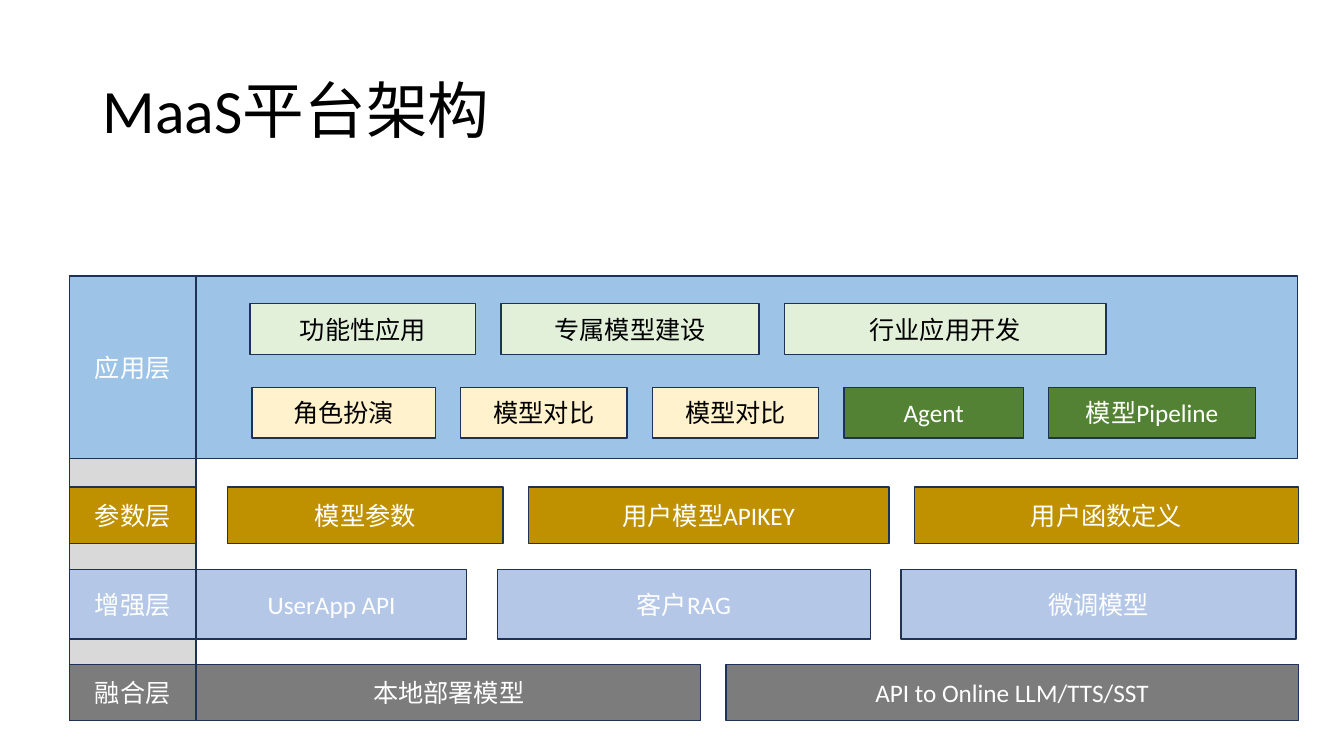
from pptx import Presentation
from pptx.dml.color import RGBColor
from pptx.enum.shapes import MSO_SHAPE
from pptx.enum.text import MSO_ANCHOR, PP_ALIGN
from pptx.util import Inches, Pt

RECT = MSO_SHAPE.RECTANGLE
MIDDLE = MSO_ANCHOR.MIDDLE
LEFT, CENTER = PP_ALIGN.LEFT, PP_ALIGN.CENTER

BLACK = RGBColor(0x00, 0x00, 0x00)
WHITE = RGBColor(0xFF, 0xFF, 0xFF)
NAVY = RGBColor(0x1E, 0x32, 0x56)
SKY = RGBColor(0x9D, 0xC3, 0xE6)
SILVER = RGBColor(0xD9, 0xD9, 0xD9)
MINT = RGBColor(0xE2, 0xF0, 0xD9)
CREAM = RGBColor(0xFF, 0xF2, 0xCC)
GREEN = RGBColor(0x54, 0x82, 0x35)
GOLD = RGBColor(0xBF, 0x90, 0x00)
PERIWINKLE = RGBColor(0xB4, 0xC7, 0xE7)
GREY = RGBColor(0x7C, 0x7C, 0x7C)

# Lengths are percentages of the slide's width and height.
LABEL_X, LABEL_W = 5.18, 9.4
BODY_X, BODY_W = 14.63, 81.9
APP_Y, APP_H = 36.53, 24.13
COLUMN_H = 58.8
GAP = 1.88

# Rows inside the application layer: left, top, height, boxes
APP_ROWS = [
    (18.6, 40.13, 6.8, [("功能性应用", 16.8, MINT, BLACK),
                        ("专属模型建设", 19.2, MINT, BLACK),
                        ("行业应用开发", 23.93, MINT, BLACK)]),
    (18.75, 51.25, 6.7, [("角色扮演", 13.65, CREAM, BLACK),
                         ("模型对比", 12.38, CREAM, BLACK),
                         ("模型对比", 12.38, CREAM, BLACK),
                         ("Agent", 13.35, GREEN, WHITE),
                         ("模型Pipeline", 15.38, GREEN, WHITE)]),
]

# Lower layers: label, colour, left, top, height, gap, boxes
LAYERS = [
    ("参数层", GOLD, 16.95, 64.4, 7.47, GAP,
     [("模型参数", 20.48), ("用户模型APIKEY", 26.85), ("用户函数定义", 28.58)]),
    ("增强层", PERIWINKLE, BODY_X, 75.33, 9.2, 2.28,
     [("UserApp API", 20.1), ("客户RAG", 27.75), ("微调模型", 29.4)]),
    ("融合层", GREY, BODY_X, 87.87, 7.47, GAP,
     [("本地部署模型", 37.5), ("API to Online LLM/TTS/SST", 42.6)]),
]


class Deck:
    font = "Calibri"
    title_size = Pt(44)
    box_size = Pt(18)

    def __init__(self):
        self.prs = Presentation()
        self.prs.slide_width = Inches(13.33)
        self.prs.slide_height = Inches(7.5)
        self.s = self.prs.slides.add_slide(self.prs.slide_layouts[5])

    def place(self, x, y, w, h):
        """Turn percentages of the slide into lengths."""
        sw, sh = self.prs.slide_width, self.prs.slide_height
        return [int(share * side / 100)
                for share, side in ((x, sw), (y, sh), (w, sw), (h, sh))]

    def add_text(self, sp, text, size, color, align):
        tf = sp.text_frame
        tf.word_wrap = True
        tf.vertical_anchor = MIDDLE
        p = tf.paragraphs[0]
        p.alignment = align
        r = p.add_run()
        r.text = text
        r.font.name = self.font
        r.font.size = size
        r.font.color.rgb = color
        return p

    def title(self, text, x, y, w, h):
        sp = self.s.shapes.title
        sp.left, sp.top, sp.width, sp.height = self.place(x, y, w, h)
        p = self.add_text(sp, text, self.title_size, BLACK, LEFT)
        p.line_spacing = 0.9

    def box(self, x, y, w, h, fill, text="", color=WHITE):
        sp = self.s.shapes.add_shape(RECT, *self.place(x, y, w, h))
        sp.shadow.inherit = False
        sp.fill.solid()
        sp.fill.fore_color.rgb = fill
        sp.line.color.rgb = NAVY
        sp.line.width = Pt(1)
        if text:
            self.add_text(sp, text, self.box_size, color, CENTER)

    def row(self, x, y, h, gap, boxes):
        """Lay boxes of (text, width, fill, colour) out from left to right."""
        for text, w, fill, color in boxes:
            self.box(x, y, w, h, fill, text, color)
            x += w + gap


def main():
    deck = Deck()
    deck.title("MaaS平台架构", 6.9, 5.33, 86.25, 19.33)

    deck.box(BODY_X, APP_Y, BODY_W, APP_H, SKY)
    deck.box(LABEL_X, APP_Y, LABEL_W, COLUMN_H, SILVER)
    deck.box(LABEL_X, APP_Y, LABEL_W, APP_H, SKY, "应用层")
    for x, y, h, boxes in APP_ROWS:
        deck.row(x, y, h, GAP, boxes)

    for label, fill, x, y, h, gap, boxes in LAYERS:
        deck.box(LABEL_X, y, LABEL_W, h, fill, label)
        deck.row(x, y, h, gap, [(text, w, fill, WHITE) for text, w in boxes])

    deck.prs.save("out.pptx")


if __name__ == "__main__":
    main()
